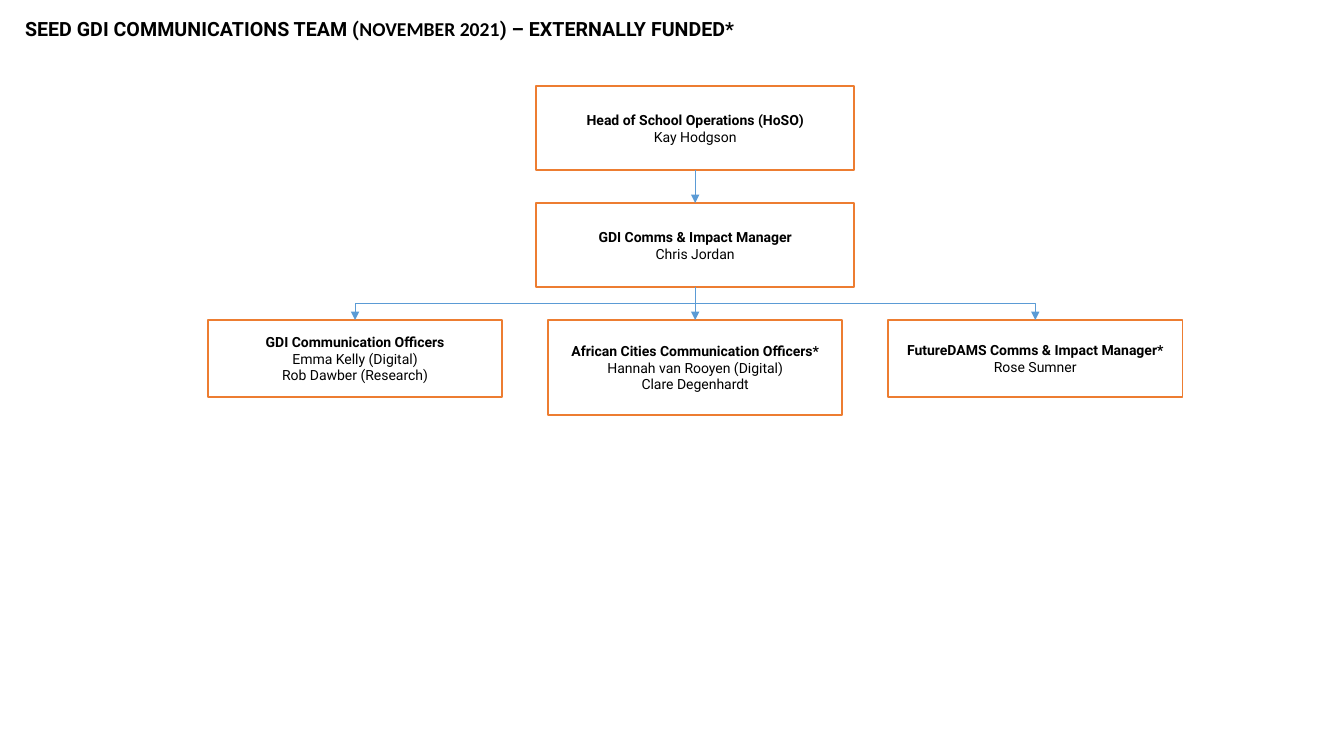
from pptx import Presentation
from pptx.dml.color import RGBColor
from pptx.enum.shapes import MSO_CONNECTOR as Link, MSO_SHAPE as Shape
from pptx.enum.text import MSO_ANCHOR as Anchor, MSO_AUTO_SIZE as Fit, PP_ALIGN as Align
from pptx.oxml.ns import qn
from pptx.util import Inches, Pt
from lxml.etree import SubElement

# Content
TITLE = [
    ("SEED GDI COMMUNICATIONS TEAM (", "Roboto"),
    ("NOVEMBER 2021", "Calibri"),
    (") – EXTERNALLY FUNDED*", "Roboto"),
]
HEAD = ["Head of School Operations (HoSO)", "Kay Hodgson"]
LEAD = ["GDI Comms & Impact Manager", "Chris Jordan"]
TEAMS = [  # box height, lines
    (77, ["GDI Communication Officers", "Emma Kelly (Digital)", "Rob Dawber (Research)"]),
    (95, ["African Cities Communication Officers*", "Hannah van Rooyen (Digital)",
          "Clare Degenhardt"]),
    (77, ["FutureDAMS Comms & Impact Manager*", "Rose Sumner"]),
]

BLACK = RGBColor(0x00, 0x00, 0x00)
ORANGE = RGBColor(0xED, 0x7D, 0x31)
BLUE = RGBColor(0x5B, 0x9B, 0xD5)

# Layout in px
MID = 695
TOP_W, TOP_H = 318, 84
HEAD_Y, LEAD_Y, TEAM_Y = 86, 203, 320
TEAM_W, STEP = 294, 340


def px(n):
    return round(n * 914400 / 100.8)


def add_box(slide, mid, top, wide, high, lines):
    box = slide.shapes.add_shape(Shape.RECTANGLE, px(mid - wide / 2), px(top), px(wide), px(high))
    box.shadow.inherit = False
    box.fill.background()
    box.line.color.rgb = ORANGE
    box.line.width = Pt(1)
    frame = box.text_frame
    frame.word_wrap = True
    frame.vertical_anchor = Anchor.MIDDLE
    for i, line in enumerate(lines):
        para = frame.paragraphs[0] if i == 0 else frame.add_paragraph()
        para.text = line
        para.alignment = Align.CENTER
        font = para.font
        font.name, font.size, font.bold = "Roboto", Pt(10), i == 0
        font.color.rgb = BLACK


def add_arrow(slide, end, top, low):
    """Run from the middle column at top down to column end at low."""
    if end == MID:
        arrow = slide.shapes.add_connector(Link.STRAIGHT, px(MID), px(top), px(MID), px(low))
    else:
        # An elbow that starts downwards is a sideways one turned a quarter
        side = 1 if end > MID else -1
        mid_x, mid_y = (MID + end) / 2, (top + low) / 2
        half_w, half_h = side * (low - top) / 2, abs(end - MID) / 2
        arrow = slide.shapes.add_connector(
            Link.ELBOW, px(mid_x + half_w), px(mid_y - half_h),
            px(mid_x - half_w), px(mid_y + half_h))
        turn = 270 if side > 0 else 90
        arrow._element.spPr.find(qn("a:xfrm")).set("rot", str(turn * 60000))
    arrow.line.color.rgb = BLUE
    arrow.line.width = Pt(0.5)
    SubElement(arrow.line._get_or_add_ln(), qn("a:tailEnd"), type="triangle")
    SubElement(arrow._element.spPr, qn("a:effectLst"))


def main():
    deck = Presentation()
    deck.slide_width, deck.slide_height = Inches(13.33), Inches(7.5)
    slide = deck.slides.add_slide(deck.slide_layouts[5])

    # Title
    title = slide.shapes.title
    title.left, title.top, title.width, title.height = px(15), px(12), px(898), px(50)
    frame = title.text_frame
    frame.auto_size = Fit.NONE
    frame.vertical_anchor = Anchor.TOP
    para = frame.paragraphs[0]
    para.alignment = Align.LEFT
    para.font.size, para.font.bold = Pt(14), True
    para.font.color.rgb = BLACK
    for text, face in TITLE:
        run = para.add_run()
        run.text = text
        run.font.name = face

    # Managers
    add_box(slide, MID, HEAD_Y, TOP_W, TOP_H, HEAD)
    add_box(slide, MID, LEAD_Y, TOP_W, TOP_H, LEAD)
    add_arrow(slide, MID, HEAD_Y + TOP_H, LEAD_Y)

    # Teams
    for i, (high, lines) in enumerate(TEAMS):
        mid = MID + (i - 1) * STEP
        add_box(slide, mid, TEAM_Y, TEAM_W, high, lines)
        add_arrow(slide, mid, LEAD_Y + TOP_H, TEAM_Y)

    deck.save("out.pptx")


if __name__ == "__main__":
    main()
